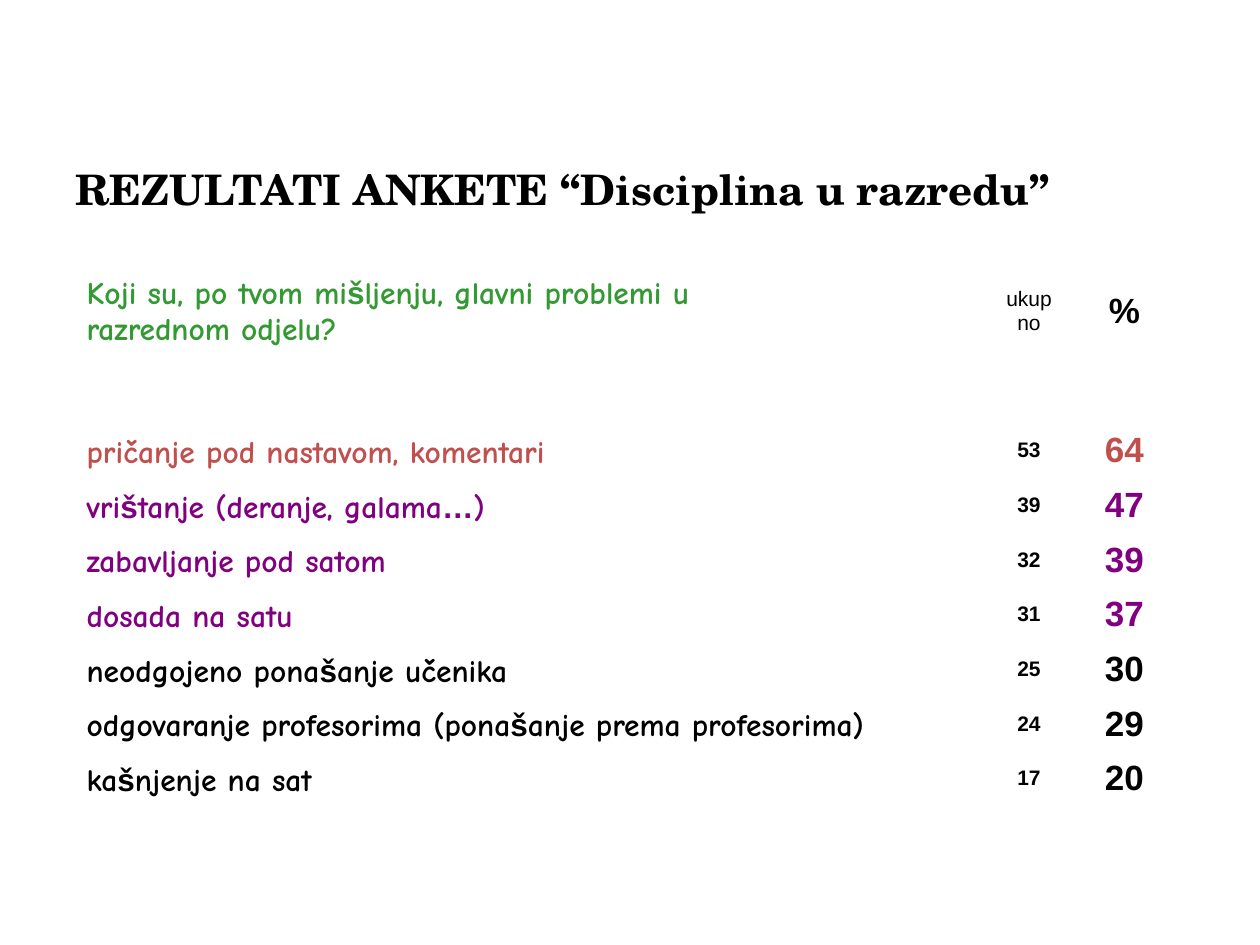
import itertools
import pptx
import pptx.util
import pptx.dml.color
import pptx.enum.text

TITLE = "REZULTATI ANKETE “Disciplina u razredu”"
HEAD = ("Koji su, po tvom mišljenju, glavni problemi u\nrazrednom odjelu?", "ukupno", "%")
ROWS = [
    ("pričanje pod nastavom, komentari", 53, 64, "red"),
    ("vrištanje (deranje, galama…)", 39, 47, "plum"),
    ("zabavljanje pod satom", 32, 39, "plum"),
    ("dosada na satu", 31, 37, "plum"),
    ("neodgojeno ponašanje učenika", 25, 30, "ink"),
    ("odgovaranje profesorima (ponašanje prema profesorima)", 24, 29, "ink"),
    ("kašnjenje na sat", 17, 20, "ink"),
]
THEME = {
    "ink": "000000", "green": "339933", "red": "C0504D", "plum": "800080",
    "serif": "TeX Gyre Schola", "hand": "Comic Neue", "sans": "Arial",
    "title": 24, "label": 18, "count": 12, "share": 20,
}
COLS = (917, 76, 115)
TALL = (79, 68, 53, 54, 53, 53, 54, 53, 53)
SANS = "š…"

ANCHOR = pptx.enum.text.MSO_ANCHOR
CENTER = pptx.enum.text.PP_ALIGN.CENTER


def px(n):
    return pptx.util.Emu(round(n * 914400 / 126))


def style(para, face, size, color, bold=True):
    font = para.font
    font.name = THEME[face]
    font.size = pptx.util.Pt(THEME[size])
    font.bold = bold
    font.color.rgb = pptx.dml.color.RGBColor.from_string(THEME[color])


def label(cell, text, color):
    cell.vertical_anchor = ANCHOR.BOTTOM
    frame = cell.text_frame
    for i, line in enumerate(text.split("\n")):
        para = frame.add_paragraph() if i else frame.paragraphs[0]
        style(para, "hand", "label", color)
        for sans, part in itertools.groupby(line, lambda c: c in SANS):
            run = para.add_run()
            run.text = "".join(part)
            run.font.name = THEME["sans" if sans else "hand"]


def value(cell, text, size, color, bold=True):
    cell.vertical_anchor = ANCHOR.MIDDLE
    cell.text = str(text)
    para = cell.text_frame.paragraphs[0]
    para.alignment = CENTER
    style(para, "sans", size, color, bold)


def main():
    deck = pptx.Presentation()
    deck.slide_width, deck.slide_height = px(1260), px(945)
    slide = deck.slides.add_slide(deck.slide_layouts[6])

    frame = slide.shapes.add_textbox(px(63), px(126), px(1134), px(126)).text_frame
    frame.word_wrap = True
    frame.vertical_anchor = ANCHOR.MIDDLE
    frame.text = TITLE
    style(frame.paragraphs[0], "serif", "title", "ink")

    grid = slide.shapes.add_table(
        len(TALL), len(COLS), px(74), px(267), px(sum(COLS)), px(sum(TALL))).table
    grid.first_row = grid.horz_banding = False
    for col, wide in zip(grid.columns, COLS):
        col.width = px(wide)
    for row, tall in zip(grid.rows, TALL):
        row.height = px(tall)
    for cell in grid.iter_cells():
        cell.fill.background()

    label(grid.cell(0, 0), HEAD[0], "green")
    value(grid.cell(0, 1), HEAD[1], "count", "ink", False)
    value(grid.cell(0, 2), HEAD[2], "share", "ink")
    for r, (text, count, share, color) in enumerate(ROWS, 2):
        label(grid.cell(r, 0), text, color)
        value(grid.cell(r, 1), count, "count", "ink")
        value(grid.cell(r, 2), share, "share", color)

    deck.save("out.pptx")


if __name__ == "__main__":
    main()
